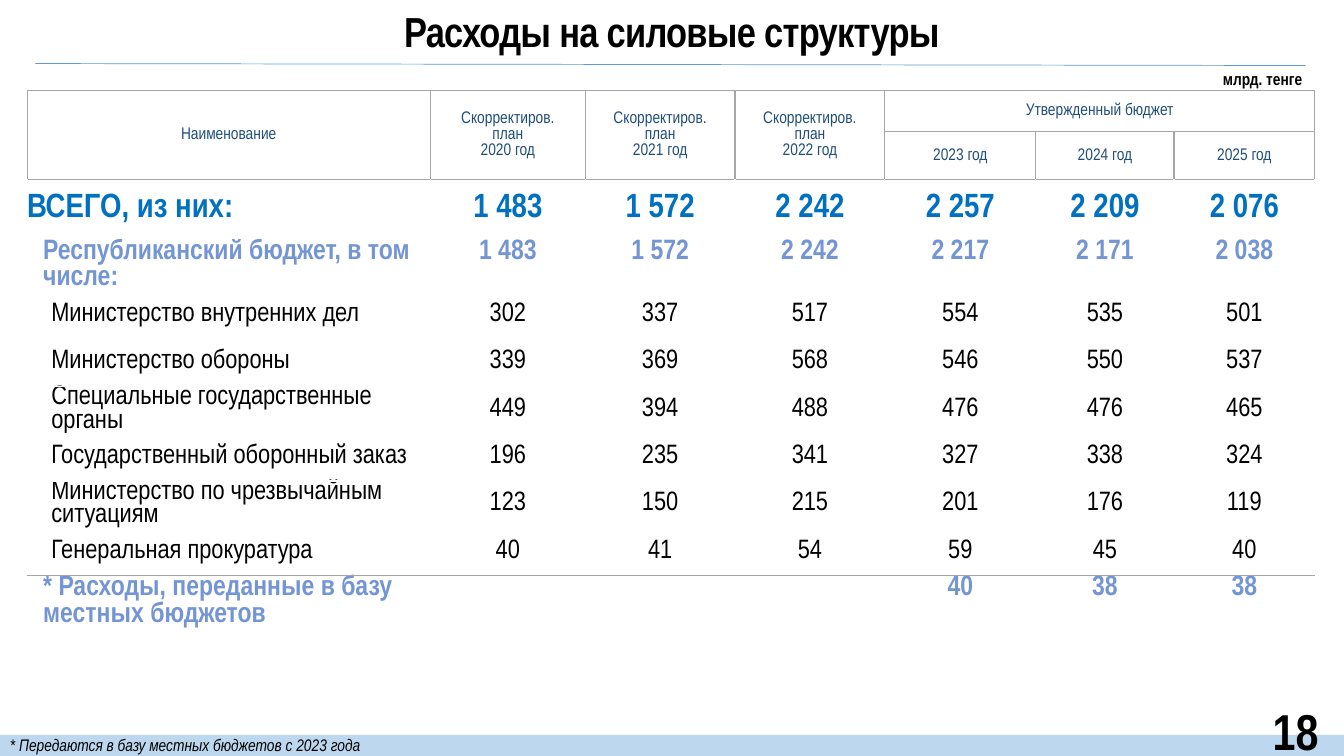
from dataclasses import dataclass

from lxml import etree
from pptx import Presentation
from pptx.dml.color import RGBColor
from pptx.enum.shapes import MSO_CONNECTOR, MSO_SHAPE
from pptx.enum.text import MSO_ANCHOR, PP_ALIGN
from pptx.oxml.ns import qn
from pptx.util import Pt

LEFT, CENTER, RIGHT, JUSTIFY = PP_ALIGN.LEFT, PP_ALIGN.CENTER, PP_ALIGN.RIGHT, PP_ALIGN.JUSTIFY
TOP, MIDDLE = MSO_ANCHOR.TOP, MSO_ANCHOR.MIDDLE
RECTANGLE, STRAIGHT = MSO_SHAPE.RECTANGLE, MSO_CONNECTOR.STRAIGHT
TITLE_ONLY = 5


@dataclass(frozen=True)
class Theme:
    font: str = "Arial Narrow"
    black: str = "000000"
    white: str = "FFFFFF"
    header: str = "1F4E79"
    total: str = "0070C0"
    subtotal: str = "7395D3"
    grid: str = "A6A6A6"
    rule: str = "5B9BD5"
    bar: str = "BDD7EE"
    title_size: float = 30
    page_size: float = 36
    total_size: float = 24
    subtotal_size: float = 20
    item_size: float = 19
    small_size: float = 12


@dataclass(frozen=True)
class RowStyle:
    size: float
    line_height: float
    color: str
    bold: bool
    indent: float
    anchor: MSO_ANCHOR


THEME = Theme()
HEADER = RowStyle(THEME.small_size, 11.4, THEME.header, False, 0.5, MIDDLE)
TOTAL = RowStyle(THEME.total_size, 22.5, THEME.total, True, 0, MIDDLE)
SUBTOTAL = RowStyle(THEME.subtotal_size, 18.7, THEME.subtotal, True, 11.5, TOP)
ITEM = RowStyle(THEME.item_size, 16.9, THEME.black, False, 17.3, MIDDLE)

COLUMN_WIDTHS = [288, 110.7, 106.9, 107.1, 107.8, 98.8, 100.4]
HEADER_HEIGHTS = [29.4, 34.3]
HEADER_ROWS = [
    ["Наименование"]
    + [f"Скорректиров.\nплан\n{year} год" for year in (2020, 2021, 2022)]
    + ["Утвержденный бюджет", "", ""],
    [""] * 4 + [f"{year} год" for year in (2023, 2024, 2025)],
]
# Each body row: style, height, name, values by year
BODY_ROWS = [
    (TOTAL, 42.3, "ВСЕГО, из них:", ["1 483", "1 572", "2 242", "2 257", "2 209", "2 076"]),
    (SUBTOTAL, 37.8, "Республиканский бюджет, в том числе:",
     ["1 483", "1 572", "2 242", "2 217", "2 171", "2 038"]),
    (ITEM, 33.8, "Министерство внутренних дел", ["302", "337", "517", "554", "535", "501"]),
    (ITEM, 33.8, "Министерство обороны", ["339", "369", "568", "546", "550", "537"]),
    (ITEM, 33.8, "Специальные государственные органы",
     ["449", "394", "488", "476", "476", "465"]),
    (ITEM, 33.8, "Государственный оборонный заказ",
     ["196", "235", "341", "327", "338", "324"]),
    (ITEM, 33.8, "Министерство по чрезвычайным ситуациям",
     ["123", "150", "215", "201", "176", "119"]),
    (ITEM, 33.8, "Генеральная прокуратура", ["40", "41", "54", "59", "45", "40"]),
    (SUBTOTAL, 40.2, "* Расходы, переданные в базу местных бюджетов",
     ["", "", "", "40", "38", "38"]),
]


def write(frame, text, size, color, align, bold=False, italic=False, spacing=None):
    for index, line in enumerate(text.split("\n")):
        paragraph = frame.add_paragraph() if index else frame.paragraphs[0]
        paragraph.alignment = align
        if spacing:
            paragraph.line_spacing = spacing
        if not line:
            continue
        run = paragraph.add_run()
        run.text = line
        font = run.font
        font.name, font.size, font.bold, font.italic = THEME.font, Pt(size), bold, italic
        font.color.rgb = RGBColor.from_string(color)


def add_label(slide, box, text, size, align, **style):
    frame = slide.shapes.add_textbox(*map(Pt, box)).text_frame
    frame.word_wrap = True
    frame.vertical_anchor = MIDDLE
    write(frame, text, size, THEME.black, align, **style)


def set_border(cell, side, color):
    line = etree.SubElement(cell._tc.get_or_add_tcPr(), qn(f"a:ln{side}"), w=str(Pt(1)))
    fill = etree.SubElement(line, qn("a:solidFill"))
    etree.SubElement(fill, qn("a:srgbClr"), val=color)


def fill_cell(cell, text, style, is_name, edges):
    for side, color in edges.items():
        set_border(cell, side, color)
    cell.fill.background()
    cell.margin_left = Pt(style.indent if is_name else 0.5)
    cell.margin_right = Pt(0.5)
    cell.margin_top = cell.margin_bottom = 0
    cell.vertical_anchor = style.anchor
    align = LEFT if is_name and style is not HEADER else CENTER
    write(cell.text_frame, text, style.size, style.color, align, style.bold,
          spacing=Pt(style.line_height))


def add_title(slide, box):
    title = slide.shapes.title
    title.left, title.top, title.width, title.height = map(Pt, box)
    frame = title.text_frame
    frame.word_wrap = True
    frame.vertical_anchor = MIDDLE
    write(frame, "Расходы на силовые структуры", THEME.title_size, THEME.black, CENTER,
          bold=True, spacing=1.1)
    frame.paragraphs[0].runs[0].font._element.set("spc", "-50")


def add_rule(slide, box):
    left, top, width, height = box
    rule = slide.shapes.add_connector(
        STRAIGHT, Pt(left), Pt(top), Pt(left + width), Pt(top + height))
    rule.line.color.rgb = RGBColor.from_string(THEME.rule)
    rule.line.width = Pt(0.5)
    etree.SubElement(rule._element.spPr, qn("a:effectLst"))


def add_budget_table(slide, left, top):
    rows = [(HEADER, height, texts) for height, texts in zip(HEADER_HEIGHTS, HEADER_ROWS)]
    rows += [(style, height, [name] + values) for style, height, name, values in BODY_ROWS]
    heights = [height for _, height, _ in rows]
    table = slide.shapes.add_table(
        len(rows), len(COLUMN_WIDTHS), Pt(left), Pt(top),
        Pt(sum(COLUMN_WIDTHS)), Pt(sum(heights))).table
    table.first_row = table.horz_banding = False
    for column, width in zip(table.columns, COLUMN_WIDTHS):
        column.width = Pt(width)

    # Header spans
    for index in range(4):
        table.cell(0, index).merge(table.cell(1, index))
    table.cell(0, 4).merge(table.cell(0, 6))

    # Grey grid in the header and above the last row, white elsewhere
    last = len(rows) - 1
    grey_lines = {0, 1, 2, last}
    for row, (style, height, texts) in enumerate(rows):
        table.rows[row].height = Pt(height)
        side = THEME.grid if style is HEADER else THEME.white
        above, below = (THEME.grid if line in grey_lines else THEME.white
                        for line in (row, row + 1))
        edges = {"L": side, "R": side, "T": above, "B": below}
        for column, text in enumerate(texts):
            fill_cell(table.cell(row, column), text, style, column == 0, edges)


def add_footer(slide, left, top, width, height):
    bar = slide.shapes.add_shape(RECTANGLE, Pt(left), Pt(top), Pt(width), Pt(height))
    bar.shadow.inherit = False
    bar.fill.solid()
    bar.fill.fore_color.rgb = RGBColor.from_string(THEME.bar)
    bar.line.fill.background()
    add_label(slide, (left, top - 6.5, width - 58, 28.8),
              "* Передаются в базу местных бюджетов с 2023 года",
              THEME.small_size, JUSTIFY, italic=True, spacing=0.9)
    add_label(slide, (left + width - 114, top - 17.3, 103, 28.8),
              "18", THEME.page_size, RIGHT, bold=True)


def build_budget_slide(presentation):
    slide = presentation.slides.add_slide(presentation.slide_layouts[TITLE_ONLY])
    add_title(slide, (0, 1.4, 960, 37.4))
    add_rule(slide, (25.2, 45.4, 907.2, 1.4))
    add_label(slide, (806.4, 43.9, 131, 26.6), "млрд. тенге", THEME.small_size, RIGHT,
              bold=True, spacing=0.9)
    add_budget_table(slide, 19.4, 64.6)
    add_footer(slide, 0, 524.9, 960, 15.1)


def main():
    presentation = Presentation()
    presentation.slide_width, presentation.slide_height = Pt(960), Pt(540)
    build_budget_slide(presentation)
    presentation.save("out.pptx")


if __name__ == "__main__":
    main()
